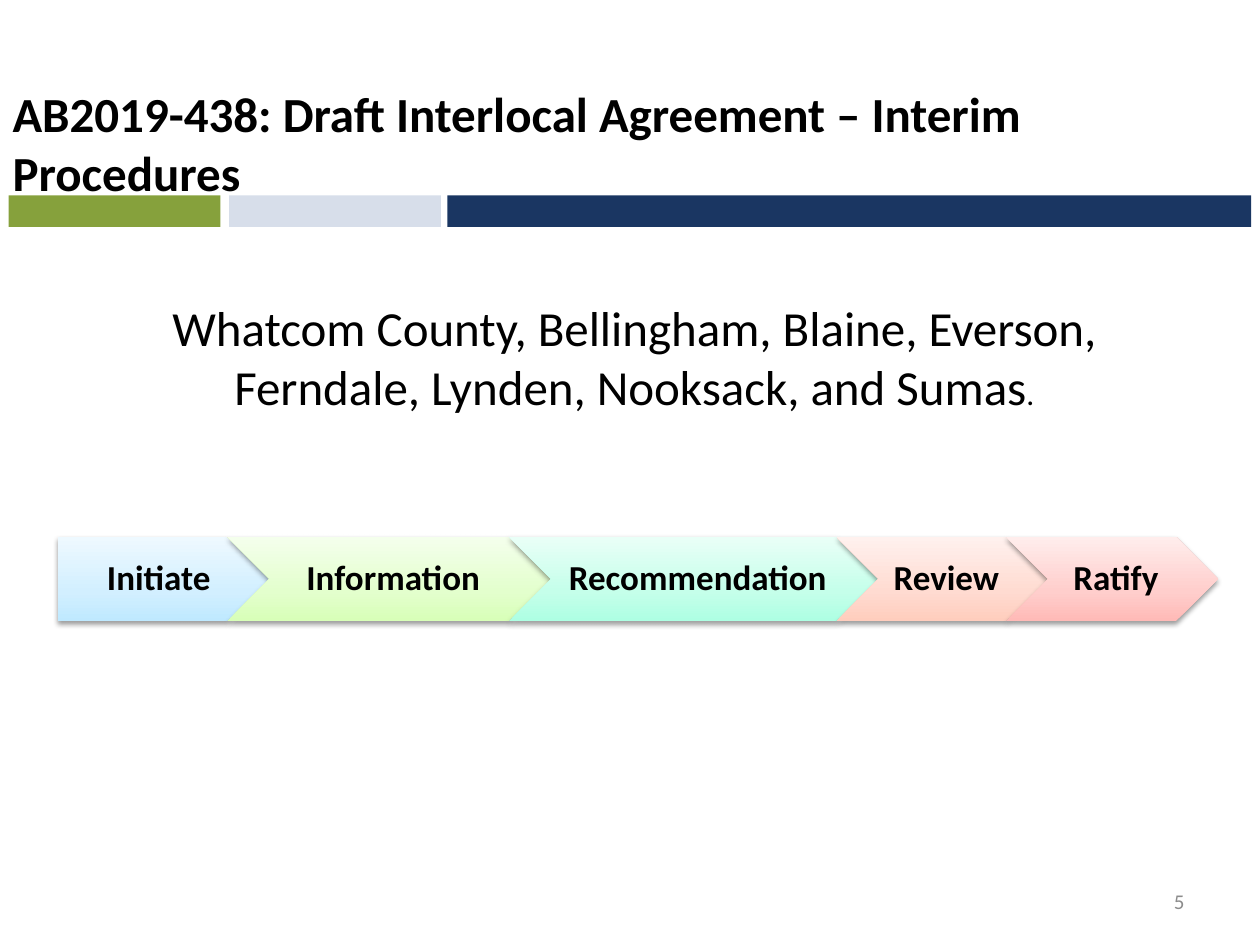
from lxml import etree
from pptx import Presentation
from pptx.dml.color import RGBColor
from pptx.enum.shapes import MSO_SHAPE
from pptx.enum.text import MSO_ANCHOR, PP_ALIGN
from pptx.oxml import parse_xml
from pptx.util import Pt

RECT, PENTAGON, CHEVRON = MSO_SHAPE.RECTANGLE, MSO_SHAPE.PENTAGON, MSO_SHAPE.CHEVRON
LEFT, CENTER, RIGHT = PP_ALIGN.LEFT, PP_ALIGN.CENTER, PP_ALIGN.RIGHT
TOP, MIDDLE, BOTTOM = MSO_ANCHOR.TOP, MSO_ANCHOR.MIDDLE, MSO_ANCHOR.BOTTOM
TITLE_ONLY = 5
A = "http://schemas.openxmlformats.org/drawingml/2006/main"


def rgb(value):
    return RGBColor.from_string(value)


class Deck:
    font = "Calibri"
    ink = "000000"

    def __init__(self, width, height):
        self.prs = Presentation()
        self.prs.slide_width, self.prs.slide_height = Pt(width), Pt(height)
        self.s = self.prs.slides.add_slide(self.prs.slide_layouts[TITLE_ONLY])

    def set_text(self, sp, text, size, align, anchor, bold=False, color=ink):
        tf = sp.text_frame
        tf.word_wrap = True
        tf.vertical_anchor = anchor
        tf.text = text
        p = tf.paragraphs[0]
        p.alignment = align
        p.font.name, p.font.size, p.font.bold = self.font, Pt(size), bold
        p.font.color.rgb = rgb(color)
        return p

    def title(self, text, x, y, w, h):
        sp = self.s.shapes.title
        sp.left, sp.top, sp.width, sp.height = Pt(x), Pt(y), Pt(w), Pt(h)
        self.set_text(sp, text, 28, LEFT, BOTTOM, bold=True)
        # Bring the title in front of the bars
        self.s.shapes._spTree.append(sp._element)

    def text(self, text, x, y, w, h, size, align, anchor, color=ink):
        sp = self.s.shapes.add_textbox(Pt(x), Pt(y), Pt(w), Pt(h))
        return self.set_text(sp, text, size, align, anchor, color=color)

    def shape(self, kind, x, y, w, h):
        sp = self.s.shapes.add_shape(kind, Pt(x), Pt(y), Pt(w), Pt(h))
        sp.shadow.inherit = False
        sp.line.fill.background()
        return sp

    def bar(self, x, y, w, h, color):
        sp = self.shape(RECT, x, y, w, h)
        sp.fill.solid()
        sp.fill.fore_color.rgb = rgb(color)

    def step(self, kind, text, x, y, w, h, colors):
        sp = self.shape(kind, x, y, w, h)
        self.gradient(sp, colors)
        self.soft_shadow(sp)
        p = self.set_text(sp, text, 20, CENTER, MIDDLE, bold=True)
        p.line_spacing = 0.9
        tf = sp.text_frame
        tf.margin_left = Pt(8.5 if kind == PENTAGON else 6.5)
        tf.margin_right = Pt(2)
        tf.margin_top = tf.margin_bottom = Pt(4)

    def gradient(self, sp, colors):
        sp.fill.gradient()
        sp.fill.gradient_angle = 90
        stops = sp._element.spPr.find(f".//{{{A}}}gsLst")
        for old in list(stops):
            stops.remove(old)
        for pos, color in zip((0, 35, 100), colors):
            gs = etree.SubElement(stops, f"{{{A}}}gs", pos=str(pos * 1000))
            etree.SubElement(gs, f"{{{A}}}srgbClr", val=color)

    def soft_shadow(self, sp):
        effects = sp._element.spPr.find(f"{{{A}}}effectLst")
        effects.append(parse_xml(
            f'<a:outerShdw xmlns:a="{A}" blurRad="{Pt(3.1)}" dist="{Pt(1.6)}" '
            'dir="5400000" rotWithShape="0"><a:srgbClr val="000000">'
            '<a:alpha val="38000"/></a:srgbClr></a:outerShdw>'))


def main():
    deck = Deck(720, 540)

    # Header bars and title
    for x, w, color in ((255.6, 459.4, "1A3662"), (5, 121, "86A13C"), (131, 121, "D7DEEA")):
        deck.bar(x, 111.6, w, 18, color)
    deck.title("AB2019-438: Draft Interlocal Agreement – Interim Procedures",
               0, 10.8, 712.8, 108)

    # Slide number
    deck.text("5", 516, 500.4, 168, 28.8, 12, RIGHT, MIDDLE, "8C8C8C")

    # Process steps, each tip overlapping the next step by half the height
    steps = (
        ("Initiate", 121, ("BFE9FF", "D2EFFF", "EEF9FF")),
        ("Information", 185, ("D8FFB8", "E3FFCD", "F4FFEC")),
        ("Recommendation", 211, ("AEFFE3", "C5FFEA", "E9FFF7")),
        ("Review", 121, ("FFCDBD", "FFDBD1", "FFF1EE")),
        ("Ratify", 121, ("FFBAB7", "FFCECC", "FFEDEC")),
    )
    x, height = 33, 48
    for i, (name, w, colors) in enumerate(steps):
        deck.step(CHEVRON if i else PENTAGON, name, x, 306.8, w, height, colors)
        x += w - height / 2

    # Participating governments
    p = deck.text("Whatcom County, Bellingham, Blaine, Everson, "
                  "Ferndale, Lynden, Nooksack, and Sumas",
                  41, 166.3, 643, 75, 28, CENTER, TOP)
    r = p.add_run()
    r.text = "."
    r.font.size = Pt(18)

    deck.prs.save("out.pptx")


if __name__ == "__main__":
    main()
